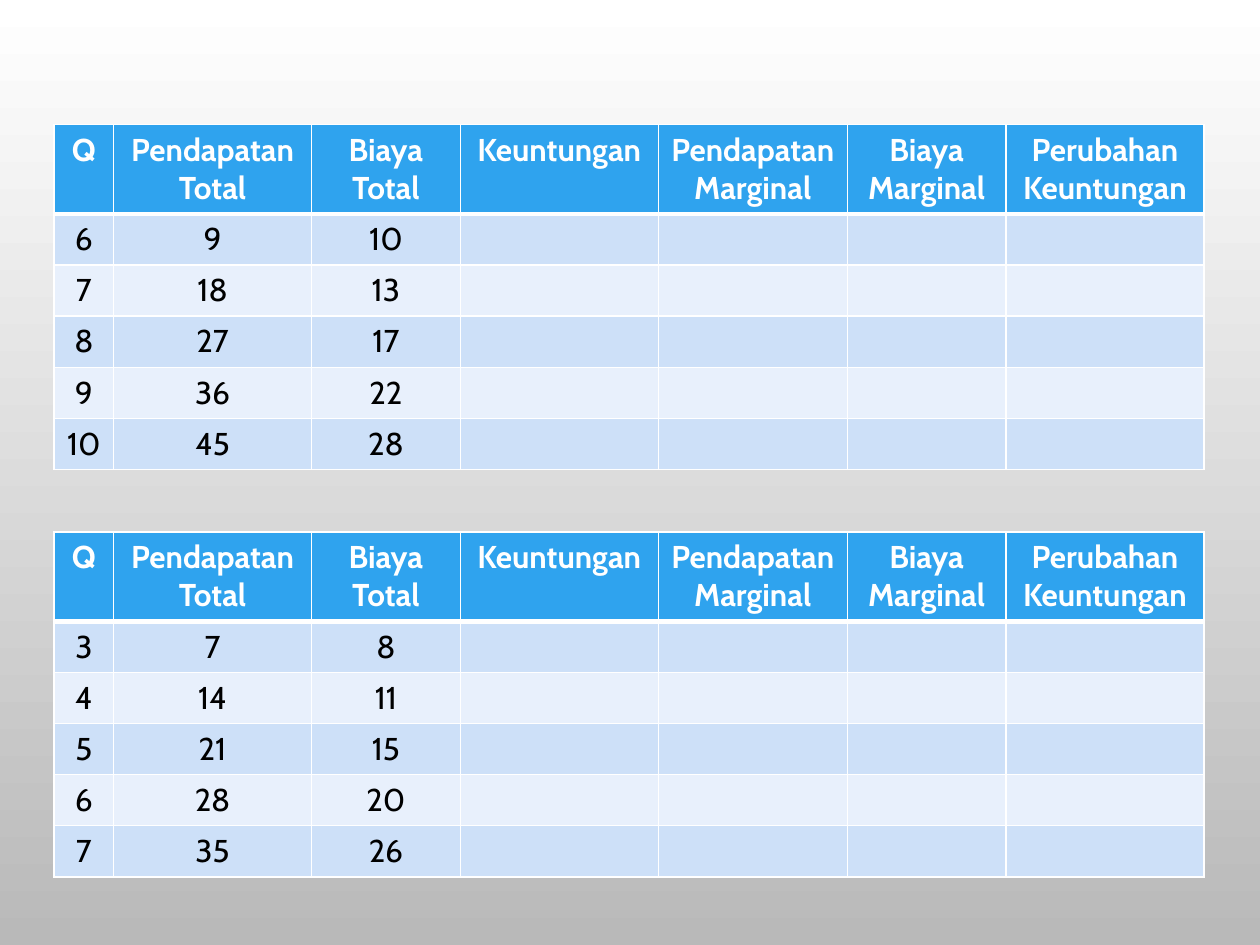
from lxml import etree
from pptx import Presentation
from pptx.dml.color import RGBColor
from pptx.enum.text import PP_ALIGN
from pptx.oxml.ns import qn
from pptx.util import Cm, Pt

WHITE = RGBColor(0xFF, 0xFF, 0xFF)
BLACK = RGBColor(0x00, 0x00, 0x00)
GREY = RGBColor(0xB9, 0xB9, 0xB9)
BLUE = RGBColor(0x2F, 0xA3, 0xEE)
BAND_DARK = RGBColor(0xCD, 0xE0, 0xF8)
BAND_LIGHT = RGBColor(0xE8, 0xF0, 0xFC)

HEADERS = ["Q", "Pendapatan Total", "Biaya Total", "Keuntungan",
           "Pendapatan Marginal", "Biaya Marginal", "Perubahan Keuntungan"]
COL_WIDTHS = [1.2, 3.99, 3, 3.99, 3.81, 3.2, 3.99]
HEADER_HEIGHT = 1.78
ROW_HEIGHT = 1.03
TABLES = [
    (2.51, [(6, 9, 10), (7, 18, 13), (8, 27, 17), (9, 36, 22), (10, 45, 28)]),
    (10.72, [(3, 7, 8), (4, 14, 11), (5, 21, 15), (6, 28, 20), (7, 35, 26)]),
]


def add_border(cell, side, width):
    ln = etree.SubElement(cell._tc.get_or_add_tcPr(), qn(f"a:ln{side}"), w=str(Pt(width)))
    fill = etree.SubElement(ln, qn("a:solidFill"))
    etree.SubElement(fill, qn("a:srgbClr"), val=str(WHITE))


prs = Presentation()
prs.slide_width = Cm(25.4)
prs.slide_height = Cm(19.05)
s = prs.slides.add_slide(prs.slide_layouts[6])

bg = s.background.fill
bg.gradient()
bg.gradient_angle = 270
for stop, color in zip(bg.gradient_stops, (WHITE, GREY)):
    stop.color.rgb = color

for top, data in TABLES:
    rows = [HEADERS] + data
    height = HEADER_HEIGHT + ROW_HEIGHT * len(data)
    table = s.shapes.add_table(len(rows), len(HEADERS), Cm(1.09), Cm(top),
                               Cm(sum(COL_WIDTHS)), Cm(height)).table
    for col, width in zip(table.columns, COL_WIDTHS):
        col.width = Cm(width)

    for i, values in enumerate(rows):
        is_header = i == 0
        table.rows[i].height = Cm(HEADER_HEIGHT if is_header else ROW_HEIGHT)
        band = BAND_DARK if i % 2 else BAND_LIGHT
        for j in range(len(HEADERS)):
            cell = table.cell(i, j)
            add_border(cell, "L", 1)
            add_border(cell, "R", 1)
            add_border(cell, "T", 3 if i == 1 else 1)
            add_border(cell, "B", 3 if is_header else 1)
            cell.fill.solid()
            cell.fill.fore_color.rgb = BLUE if is_header else band
            if j < len(values):
                p = cell.text_frame.paragraphs[0]
                p.text = str(values[j])
                p.alignment = PP_ALIGN.CENTER
                r = p.runs[0]
                r.font.name = "Cabin"
                r.font.size = Pt(18)
                r.font.bold = is_header
                r.font.color.rgb = WHITE if is_header else BLACK

prs.save("out.pptx")
